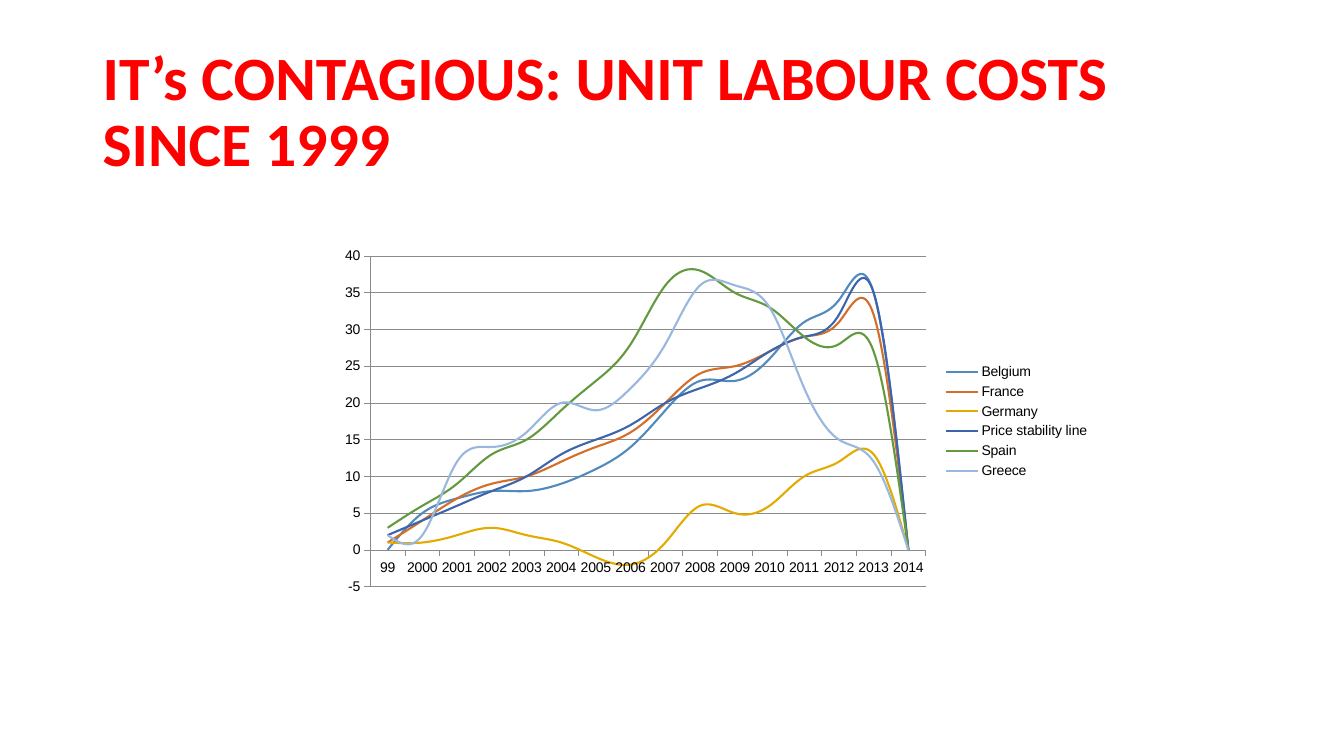
from dataclasses import dataclass

from lxml import etree
from pptx import Presentation
from pptx.chart.axis import _BaseAxis
from pptx.chart.chart import Chart
from pptx.chart.data import CategoryChartData
from pptx.chart.series import LineSeries
from pptx.dml.color import RGBColor
from pptx.dml.line import LineFormat
from pptx.enum.chart import XL_CHART_TYPE, XL_LEGEND_POSITION, XL_MARKER_STYLE, XL_TICK_MARK
from pptx.enum.text import MSO_ANCHOR
from pptx.oxml.ns import qn
from pptx.slide import Slide
from pptx.util import Inches, Pt

LINE_CHART = XL_CHART_TYPE.LINE
LEGEND_RIGHT = XL_LEGEND_POSITION.RIGHT
NO_MARKER = XL_MARKER_STYLE.NONE
TICK_OUTSIDE = XL_TICK_MARK.OUTSIDE
TICK_NONE = XL_TICK_MARK.NONE
MIDDLE = MSO_ANCHOR.MIDDLE

RED = RGBColor(0xFF, 0x00, 0x00)
BLACK = RGBColor(0x00, 0x00, 0x00)
WHITE = RGBColor(0xFF, 0xFF, 0xFF)
GRAY = RGBColor(0x8B, 0x8B, 0x8B)
BLUE = RGBColor(0x51, 0x8A, 0xBD)
ORANGE = RGBColor(0xD3, 0x6F, 0x2B)
GOLD = RGBColor(0xE3, 0xAB, 0x00)
NAVY = RGBColor(0x3C, 0x65, 0xAE)
GREEN = RGBColor(0x63, 0x9A, 0x3F)
PALE_BLUE = RGBColor(0x98, 0xB8, 0xDF)

YEARS = ["99"] + [str(year) for year in range(2000, 2015)]


@dataclass(frozen=True)
class LabourCost:
    name: str
    color: RGBColor
    values: list[int | None]


# No figures exist for 2014; the chart draws that year as zero.
LABOUR_COSTS = [
    LabourCost("Belgium", BLUE,
               [0, 5, 7, 8, 8, 9, 11, 14, 19, 23, 23, 26, 31, 34, 35, None]),
    LabourCost("France", ORANGE,
               [1, 4, 7, 9, 10, 12, 14, 16, 20, 24, 25, 27, 29, 31, 32, None]),
    LabourCost("Germany", GOLD,
               [1, 1, 2, 3, 2, 1, -1, -2, 1, 6, 5, 6, 10, 12, 13, None]),
    LabourCost("Price stability line", NAVY,
               [2, 4, 6, 8, 10, 13, 15, 17, 20, 22, 24, 27, 29, 32, 35, None]),
    LabourCost("Spain", GREEN,
               [3, 6, 9, 13, 15, 19, 23, 28, 36, 38, 35, 33, 29, 28, 27, None]),
    LabourCost("Greece", PALE_BLUE,
               [2, 2, 12, 14, 16, 20, 19, 22, 28, 36, 36, 33, 22, 15, 12, None]),
]


def add_title(slide: Slide, text: str) -> None:
    title = slide.shapes.add_textbox(Inches(0.92), Inches(0.4), Inches(11.5), Inches(1.45))
    frame = title.text_frame
    frame.word_wrap = True
    frame.vertical_anchor = MIDDLE
    frame.text = text
    paragraph = frame.paragraphs[0]
    paragraph.line_spacing = 0.9
    font = paragraph.runs[0].font
    font.name = "Calibri"
    font.size = Pt(44)
    font.bold = True
    font.color.rgb = RED


def style_line(line: LineFormat, color: RGBColor, width: float) -> None:
    line.color.rgb = color
    line.width = Pt(width)


def style_axis(axis: _BaseAxis) -> None:
    axis.major_tick_mark = TICK_OUTSIDE
    axis.minor_tick_mark = TICK_NONE
    style_line(axis.format.line, GRAY, 0.5)


def style_series(series: LineSeries, color: RGBColor) -> None:
    series.smooth = True
    series.marker.style = NO_MARKER
    style_line(series.format.line, color, 1.5)


def finish_plot_area(chart: Chart) -> None:
    """Fill the plot area white and draw missing values as zero."""
    chart_xml = chart.element.find(qn("c:chart"))
    chart_xml.find(qn("c:dispBlanksAs")).set("val", "zero")
    properties = etree.SubElement(chart_xml.find(qn("c:plotArea")), qn("c:spPr"))
    fill = etree.SubElement(properties, qn("a:solidFill"))
    etree.SubElement(fill, qn("a:srgbClr")).set("val", str(WHITE))


def add_labour_cost_chart(slide: Slide) -> None:
    data = CategoryChartData(number_format="General")
    data.categories = YEARS
    for cost in LABOUR_COSTS:
        data.add_series(cost.name, cost.values)
    chart = slide.shapes.add_chart(LINE_CHART, Inches(3.27), Inches(2.39),
                                   Inches(7.64), Inches(3.58), data).chart
    chart.has_title = False
    chart.font.name = "Arial"
    chart.font.size = Pt(10)
    chart.font.color.rgb = BLACK
    chart.has_legend = True
    chart.legend.position = LEGEND_RIGHT
    chart.legend.include_in_layout = False
    chart.plots[0].vary_by_categories = False

    style_axis(chart.category_axis)
    value_axis = chart.value_axis
    style_axis(value_axis)
    value_axis.minimum_scale = -5
    value_axis.maximum_scale = 40
    value_axis.major_unit = 5
    value_axis.has_major_gridlines = True
    style_line(value_axis.major_gridlines.format.line, GRAY, 0.5)

    for series, cost in zip(chart.plots[0].series, LABOUR_COSTS):
        style_series(series, cost.color)
    finish_plot_area(chart)


def main() -> None:
    presentation = Presentation()
    presentation.slide_width = Inches(13.33)
    presentation.slide_height = Inches(7.5)
    slide = presentation.slides.add_slide(presentation.slide_layouts[6])
    add_title(slide, "IT’s CONTAGIOUS: UNIT LABOUR COSTS SINCE 1999")
    add_labour_cost_chart(slide)
    presentation.save("out.pptx")


if __name__ == "__main__":
    main()
